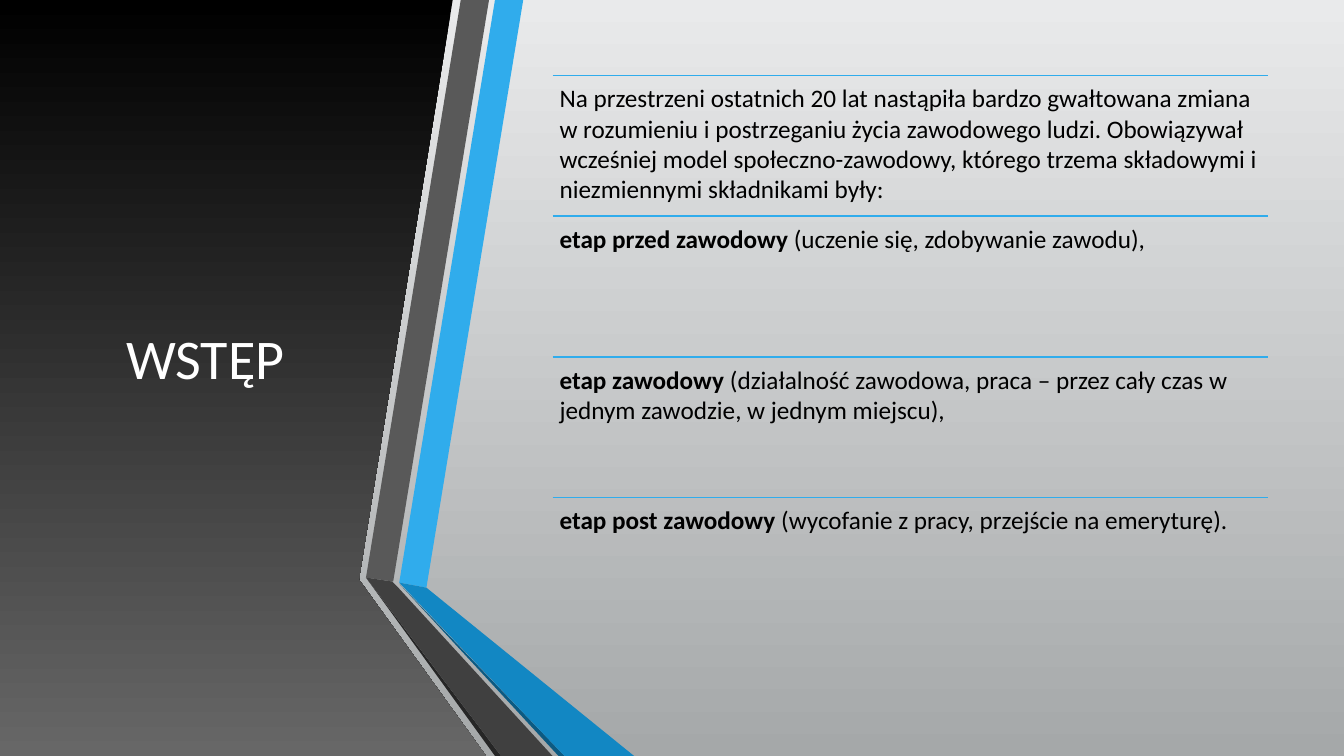
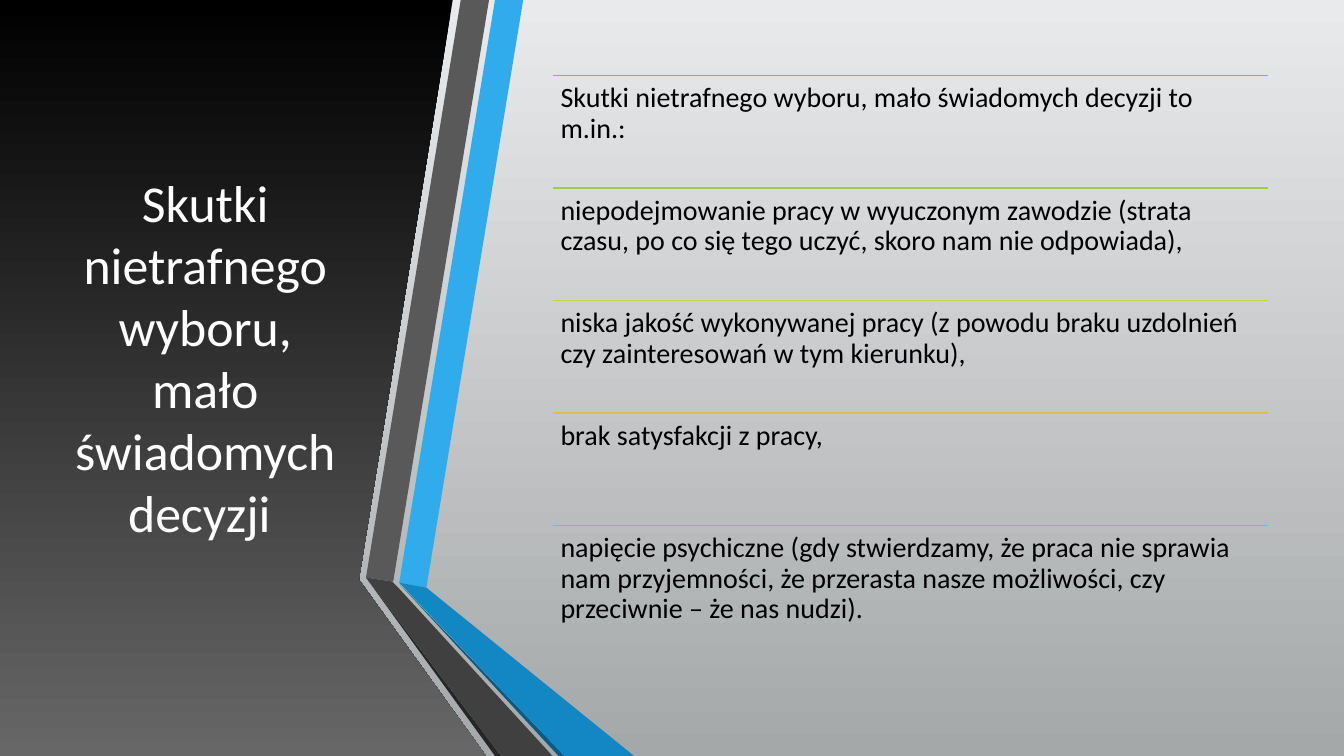
import pptx
import pptx.dml.color
import pptx.enum.shapes
import pptx.enum.text
import pptx.oxml
import pptx.oxml.ns
import pptx.util

WIDTH, HEIGHT = 13.33, 7.5
FONT = "Calibri"
TOP, BODY_HEIGHT = 0.75, 5.58
TITLE_LEFT, TITLE_WIDTH = 0.59, 2.89
LIST_LEFT, LIST_WIDTH = 5.48, 7.1
RULE_WIDTH = 1.25
BACKDROP = ("E9EAEB", "A5A8A9")
PANEL = ("000000", "676767")
BLUE, TEXT, TITLE = "30ACEC", "000000", "FFFFFF"

PANEL_OUTLINE = [(0, 0), (4.49, 0), (3.56, 5.75), (4.82, HEIGHT), (0, HEIGHT)]
BANDS = [
    (BLUE, [(3.96, 5.78), (4.23, 5.83), (5.19, 0), (4.91, 0)]),
    ("595959", [(4.85, 0), (4.57, 0), (3.63, 5.73), (3.9, 5.77)]),
    ("262626", [(3.63, 5.73), (4.91, HEIGHT), (4.97, HEIGHT)]),
    ("0C5A82", [(3.96, 5.79), (5.54, HEIGHT), (5.6, HEIGHT)]),
    ("1287C3", [(3.96, 5.78), (5.6, HEIGHT), (6.29, HEIGHT), (4.23, 5.83)]),
    ("404040", [(5.48, HEIGHT), (3.95, 5.83), (3.89, 5.77), (3.63, 5.73), (4.97, HEIGHT)]),
]

SLIDES = [
    {
        "title": "WSTĘP", "title_size": 40,
        "size": 18, "inset": 0.07, "spacing": 1.0,
        "rows": [
            (BLUE, "", "Na przestrzeni ostatnich 20 lat nastąpiła bardzo gwałtowana zmiana "
             "w rozumieniu i postrzeganiu życia zawodowego ludzi. Obowiązywał wcześniej "
             "model społeczno-zawodowy, którego trzema składowymi i niezmiennymi "
             "składnikami były:"),
            (BLUE, "etap przed zawodowy ", "(uczenie się, zdobywanie zawodu),"),
            (BLUE, "etap zawodowy ", "(działalność zawodowa, praca – przez cały czas w "
             "jednym zawodzie, w jednym miejscu),"),
            (BLUE, "etap post zawodowy ", "(wycofanie z pracy, przejście na emeryturę)."),
        ],
    },
    {
        "title": "Skutki nietrafnego wyboru, mało świadomych decyzji ", "title_size": 37,
        "size": 20, "inset": 0.08, "spacing": 0.9,
        "rows": [
            ("80C34F", "", "Skutki nietrafnego wyboru, mało świadomych decyzji to m.in.:"),
            ("A1CB4A", "", "niepodejmowanie pracy w wyuczonym zawodzie (strata czasu, "
             "po co się tego uczyć, skoro nam nie odpowiada),"),
            ("C8D346", "", "niska jakość wykonywanej pracy (z powodu braku uzdolnień "
             "czy zainteresowań w tym kierunku),"),
            ("DBC042", "", "brak satysfakcji z pracy,"),
            ("E29D3E", "", "napięcie psychiczne (gdy stwierdzamy, że praca nie sprawia nam "
             "przyjemności, że przerasta nasze możliwości, czy przeciwnie – że nas nudzi)."),
        ],
    },
]


def rgb(value):
    return pptx.dml.color.RGBColor.from_string(value)


def inches(*values):
    return [pptx.util.Inches(value) for value in values]


def assign(target, values):
    for name, value in values.items():
        setattr(target, name, value)


def fill_solid(fill, color):
    fill.solid()
    fill.fore_color.rgb = rgb(color)


def fill_downward(fill, colors):
    fill.gradient()
    fill.gradient_angle = 270
    for stop, color, position in zip(fill.gradient_stops, colors, (0, 1)):
        stop.color.rgb = rgb(color)
        stop.position = position


def add_outline(shapes, points):
    start, *others = [(x * 100, y * 100) for x, y in points]
    builder = shapes.build_freeform(*start, scale=pptx.util.Inches(0.01))
    builder.add_line_segments(others, close=True)
    outline = builder.convert_to_shape()
    outline.shadow.inherit = False
    outline.line.fill.background()
    return outline


def add_run(paragraph, text, size, color, bold=False):
    run = paragraph.add_run()
    run.text = text
    assign(run.font, {"name": FONT, "size": pptx.util.Pt(size), "bold": bold})
    run.font.color.rgb = rgb(color)


def place_title(slide, content):
    title = slide.shapes.title
    slide.shapes.element.append(title.element)
    left, top, width, height = inches(TITLE_LEFT, TOP, TITLE_WIDTH, BODY_HEIGHT)
    assign(title, {"left": left, "top": top, "width": width, "height": height})
    assign(title.text_frame, {
        "word_wrap": True,
        "auto_size": pptx.enum.text.MSO_AUTO_SIZE.NONE,
        "vertical_anchor": pptx.enum.text.MSO_ANCHOR.MIDDLE,
    })
    paragraph = title.text_frame.paragraphs[0]
    paragraph.alignment = pptx.enum.text.PP_ALIGN.CENTER
    add_run(paragraph, content["title"], content["title_size"], TITLE)


def add_rule(shapes, top, color):
    rule = shapes.add_connector(
        pptx.enum.shapes.MSO_CONNECTOR.STRAIGHT,
        *inches(LIST_LEFT, top, LIST_LEFT + LIST_WIDTH, top))
    rule.line.color.rgb = rgb(color)
    rule.line.width = pptx.util.Pt(RULE_WIDTH)
    rule.element.spPr.append(pptx.oxml.parse_xml(
        "<a:effectLst %s/>" % pptx.oxml.ns.nsdecls("a")))


def add_rows(shapes, content):
    row_height = BODY_HEIGHT / len(content["rows"])
    margin = pptx.util.Inches(content["inset"])
    for index, (color, lead, text) in enumerate(content["rows"]):
        top = TOP + index * row_height
        add_rule(shapes, top, color)
        frame = shapes.add_textbox(
            *inches(LIST_LEFT, top, LIST_WIDTH, row_height)).text_frame
        assign(frame, {"word_wrap": True, "margin_left": margin, "margin_top": margin,
                       "margin_right": margin, "margin_bottom": margin})
        paragraph = frame.paragraphs[0]
        paragraph.line_spacing = content["spacing"]
        if lead:
            add_run(paragraph, lead, content["size"], TEXT, bold=True)
        add_run(paragraph, text, content["size"], TEXT)


def build_slide(deck, layout, content):
    slide = deck.slides.add_slide(layout)
    fill_downward(add_outline(slide.shapes, PANEL_OUTLINE).fill, PANEL)
    place_title(slide, content)
    bands = slide.shapes.add_group_shape()
    for color, points in BANDS:
        fill_solid(add_outline(bands.shapes, points).fill, color)
    add_rows(slide.shapes.add_group_shape().shapes, content)


def main():
    deck = pptx.Presentation()
    deck.slide_width, deck.slide_height = inches(WIDTH, HEIGHT)
    fill_downward(deck.slide_master.background.fill, BACKDROP)
    layout = deck.slide_layouts.get_by_name("Title Only")
    for content in SLIDES:
        build_slide(deck, layout, content)
    deck.save("out.pptx")


if __name__ == "__main__":
    main()
